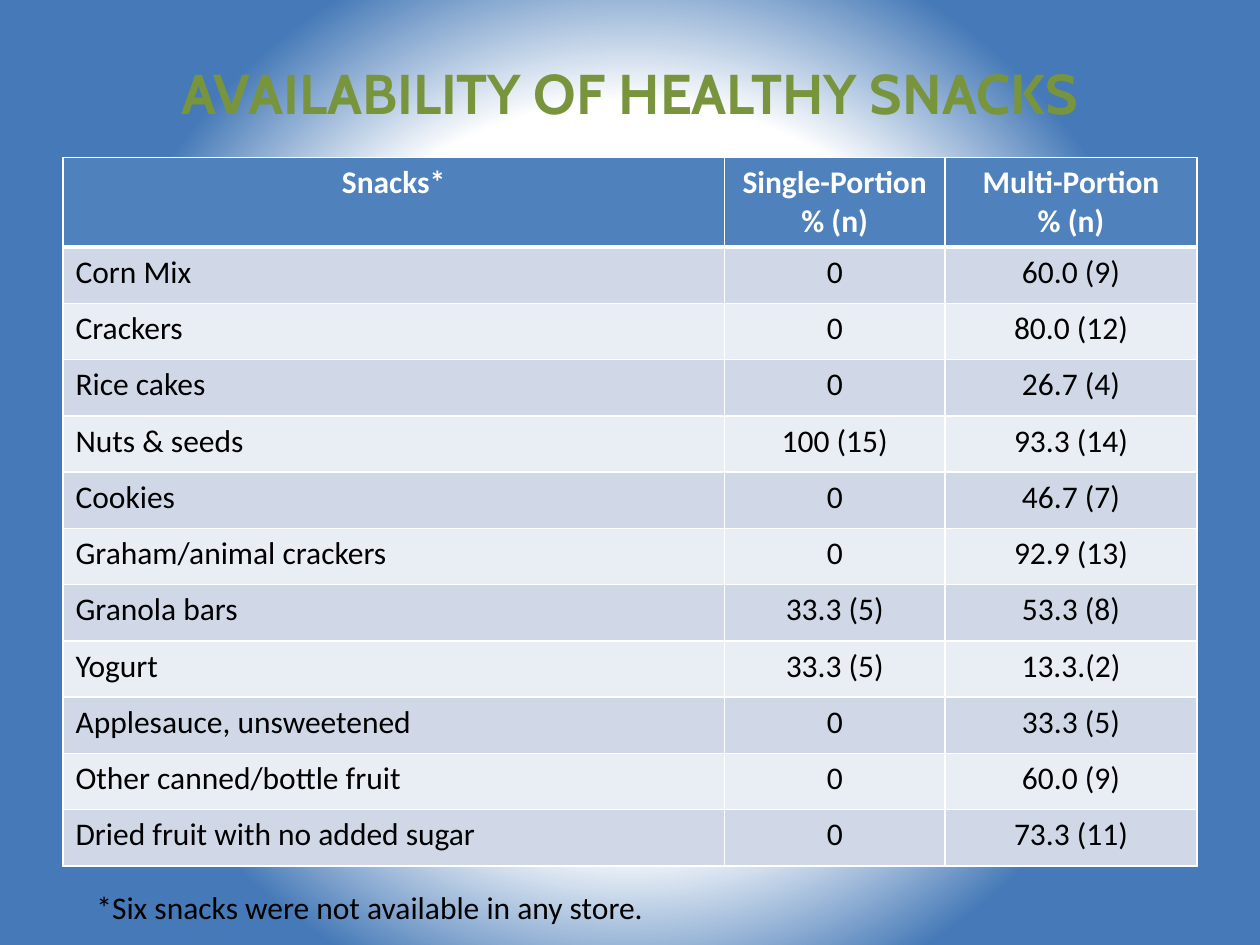
import pptx
import pptx.dml.color
import pptx.enum.text
import pptx.oxml
import pptx.oxml.ns
import pptx.util

Pt = pptx.util.Pt
ALIGN = pptx.enum.text.PP_ALIGN
ANCHOR = pptx.enum.text.MSO_ANCHOR
NAMESPACE = pptx.oxml.ns.nsdecls("a")

HEADERS = ["Snacks*", "Single-Portion\n% (n)", "Multi-Portion\n% (n)"]
SNACKS = [
    ("Corn Mix", "0", "60.0 (9)"),
    ("Crackers", "0", "80.0 (12)"),
    ("Rice cakes", "0", "26.7 (4)"),
    ("Nuts & seeds", "100 (15)", "93.3 (14)"),
    ("Cookies", "0", "46.7 (7)"),
    ("Graham/animal crackers", "0", "92.9 (13)"),
    ("Granola bars", "33.3 (5)", "53.3 (8)"),
    ("Yogurt", "33.3 (5)", "13.3.(2)"),
    ("Applesauce, unsweetened", "0", "33.3 (5)"),
    ("Other canned/bottle fruit", "0", "60.0 (9)"),
    ("Dried fruit with no added sugar", "0", "73.3 (11)"),
]
COLUMN_WIDTHS = [378, 126, 144]
HEADER_HEIGHT = 51.2


def color(value):
    return pptx.dml.color.RGBColor.from_string(value)


def write(frame, text, font, size, ink, bold=False, align=ALIGN.LEFT):
    frame.text = text
    for para in frame.paragraphs:
        para.alignment = align
        for span in para.runs:
            span.font.name = font
            span.font.size = Pt(size)
            span.font.bold = bold
            span.font.color.rgb = color(ink)


def paint_background(page):
    page.background.fill.gradient()
    gradient = page.element.find(".//" + pptx.oxml.ns.qn("a:gradFill"))
    for child in list(gradient):
        gradient.remove(child)
    gradient.append(pptx.oxml.parse_xml(
        f'<a:gsLst {NAMESPACE}>'
        '<a:gs pos="47000"><a:srgbClr val="FFFFFF"/></a:gs>'
        '<a:gs pos="71000"><a:srgbClr val="4579B7"><a:alpha val="51000"/></a:srgbClr></a:gs>'
        '</a:gsLst>'))
    gradient.append(pptx.oxml.parse_xml(
        f'<a:path {NAMESPACE} path="circle">'
        '<a:fillToRect l="50000" t="50000" r="50000" b="50000"/></a:path>'))


def place_title(page, left, top, width, height):
    title = page.shapes.title
    title.left, title.top, title.width, title.height = map(Pt, (left, top, width, height))
    write(title.text_frame, "AVAILABILITY OF HEALTHY SNACKS", "Cabin", 32, "78953D",
          True, ALIGN.CENTER)
    title.text_frame.vertical_anchor = ANCHOR.MIDDLE


def draw_borders(cell, top_width, bottom_width):
    properties = cell._tc.get_or_add_tcPr()
    for side, width in (("L", 1), ("R", 1), ("T", top_width), ("B", bottom_width)):
        properties.append(pptx.oxml.parse_xml(
            f'<a:ln{side} {NAMESPACE} w="{Pt(width)}">'
            f'<a:solidFill><a:srgbClr val="FFFFFF"/></a:solidFill></a:ln{side}>'))


def place_table(page, left, top, width, height):
    rows = [HEADERS, *SNACKS]
    table = page.shapes.add_table(len(rows), len(HEADERS), Pt(left), Pt(top),
                                  Pt(width), Pt(height)).table
    for column, column_width in zip(table.columns, COLUMN_WIDTHS):
        column.width = Pt(column_width)
    body_height = (height - HEADER_HEIGHT) / len(SNACKS)
    for r, row in enumerate(rows):
        header = r == 0
        table.rows[r].height = Pt(HEADER_HEIGHT if header else body_height)
        fill = "4F81BD" if header else "D0D8E8" if r % 2 else "E9EDF4"
        for c, text in enumerate(row):
            cell = table.cell(r, c)
            draw_borders(cell, 3 if r == 1 else 1, 3 if header else 1)
            cell.fill.solid()
            cell.fill.fore_color.rgb = color(fill)
            write(cell.text_frame, text, "Calibri", 18, "FFFFFF" if header else "000000",
                  header, ALIGN.CENTER if header or c else ALIGN.LEFT)


def place_footnote(page, left, top, width, height):
    box = page.shapes.add_textbox(Pt(left), Pt(top), Pt(width), Pt(height))
    box.text_frame.word_wrap = False
    box.text_frame.auto_size = pptx.enum.text.MSO_AUTO_SIZE.SHAPE_TO_FIT_TEXT
    write(box.text_frame, "*Six snacks were not available in any store.", "Calibri", 18, "000000")


def main():
    deck = pptx.Presentation()
    deck.slide_width, deck.slide_height = Pt(720), Pt(540)
    page = deck.slides.add_slide(deck.slide_layouts[5])
    paint_background(page)
    place_title(page, 36, 12.5, 648, 80.5)
    place_table(page, 36, 90, 648, 405)
    place_footnote(page, 48, 504, 330.5, 29)
    deck.save("out.pptx")


if __name__ == "__main__":
    main()
